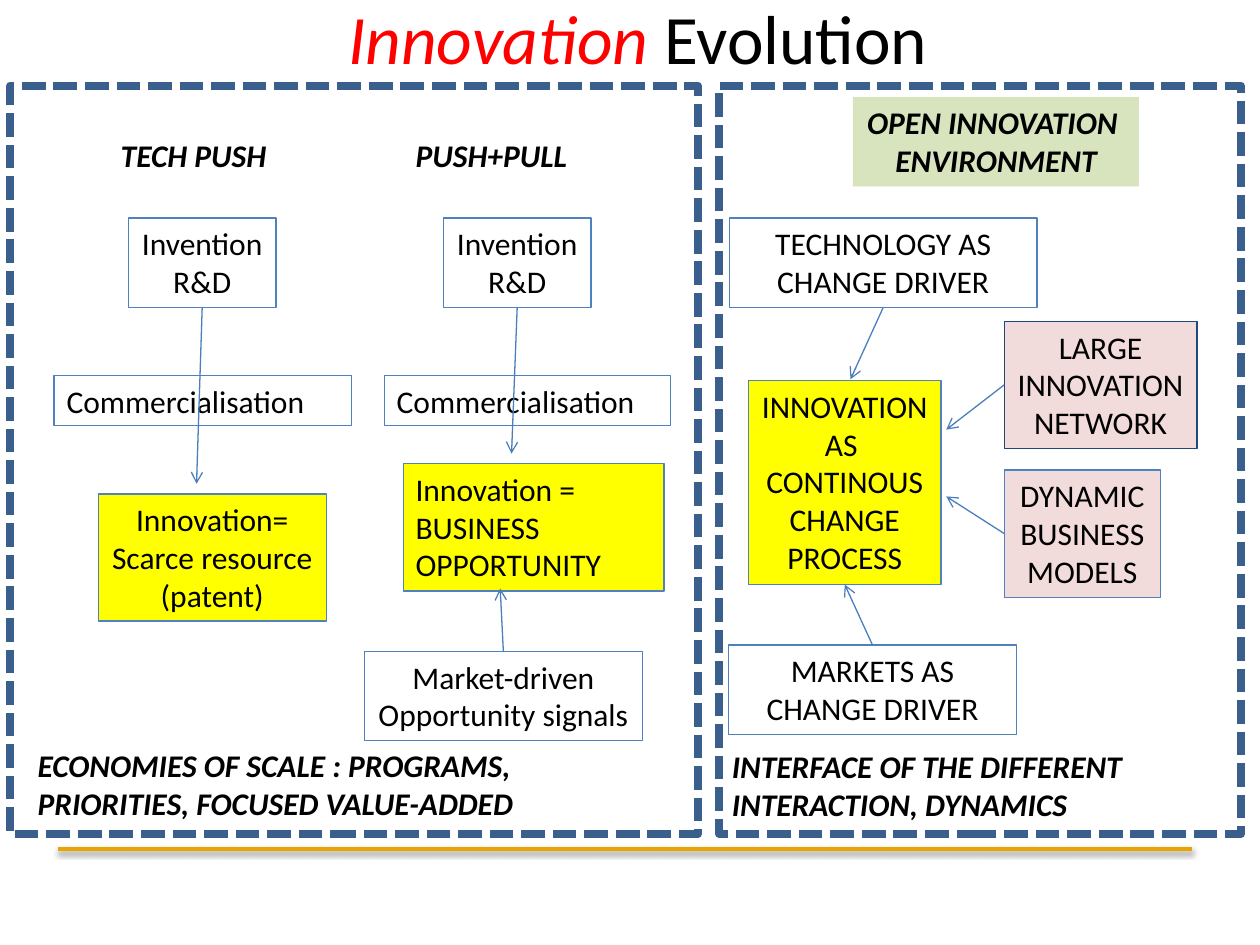
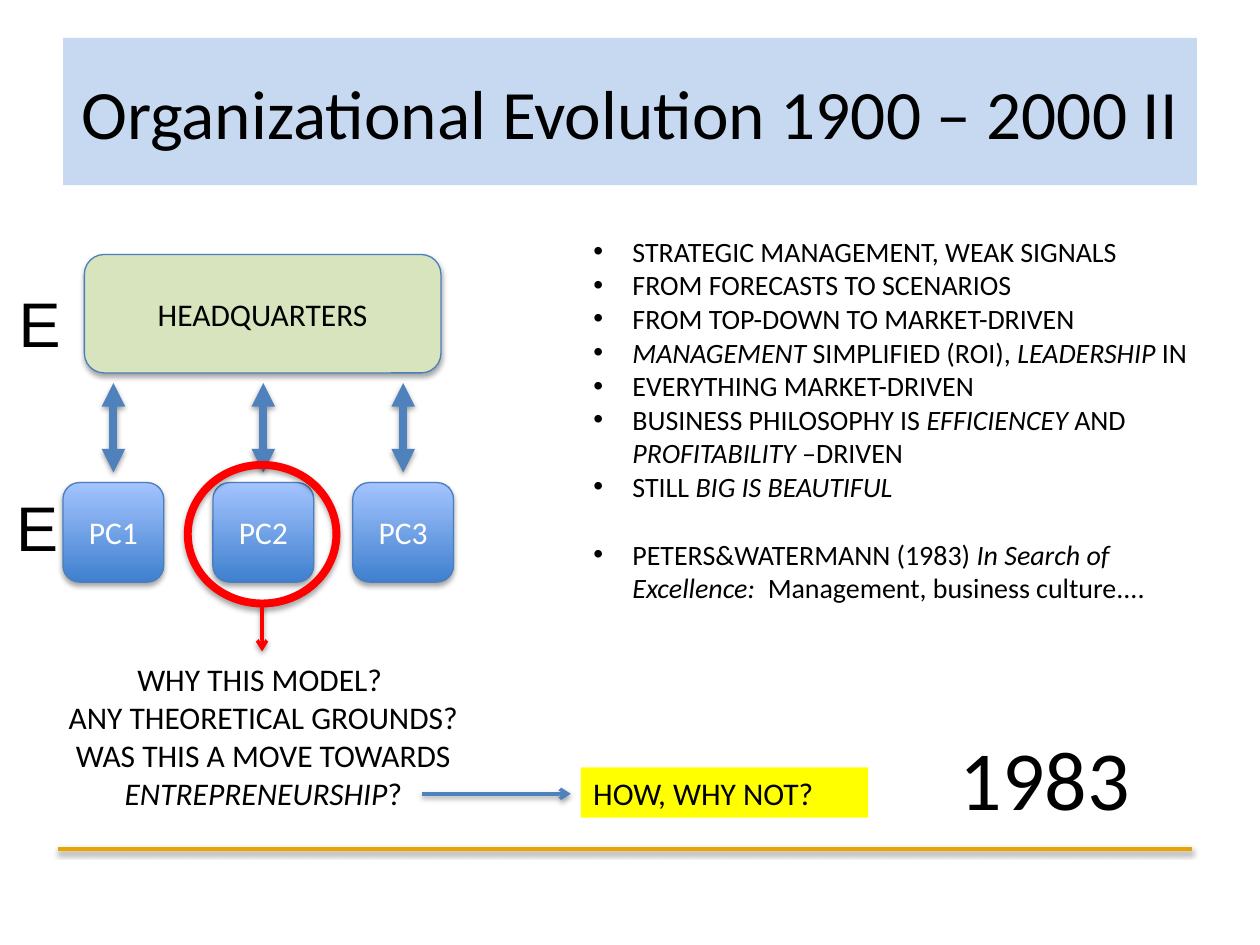
from lxml.etree import SubElement
from pptx import Presentation
from pptx.dml.color import RGBColor
from pptx.enum.dml import MSO_LINE
from pptx.enum.shapes import MSO_CONNECTOR, MSO_SHAPE as SHAPE
from pptx.enum.text import MSO_ANCHOR as ANCHOR, MSO_AUTO_SIZE, PP_ALIGN as ALIGN
from pptx.oxml.ns import qn
from pptx.util import Inches, Pt

# Shared look
BLACK, WHITE, RED, YELLOW = "000000", "FFFFFF", "FF0000", "FFFF00"
BLUE, EDGE, FRAME, NAVY = "4F81BD", "4B7EBC", "3A5F8C", "1F497D"
GREEN, PINK, SKY, GOLD = "D7E4BD", "F2DCDB", "C6D9F1", "E9A400"
PC_GRADIENT = ("3F80CE", "A4C4FF")
TITLE_SIZE = 39.6

# Content of slide 1: *stars* mark emphasis; places are left, top, width, height
INNOVATION_TITLE = " *Innovation *Evolution"
FRAMES = [(0.08, 0.68, 5.46, 5.94), (5.71, 0.68, 4.14, 5.94)]
HEADINGS = [
    ((0.86, 1.03, 1.37, 0.4), ["TECH PUSH"]),
    ((3.2, 1.03, 1.42, 0.4), ["PUSH+PULL"]),
    ((0.2, 5.87, 4.96, 0.71),
     ["ECONOMIES OF SCALE : PROGRAMS,", "PRIORITIES, FOCUSED VALUE-ADDED"]),
    ((5.71, 5.88, 3.33, 0.71),
     ["INTERFACE OF THE DIFFERENT", "INTERACTION, DYNAMICS"]),
]
OPEN_INNOVATION = ((6.77, 0.77, 2.27, 0.71), ["OPEN INNOVATION ", "ENVIRONMENT"])
INVENTION = ["Invention", "R&D"]
# name: place, lines, fill, outline, alignment
STEPS = {
    "push invention": ((1.02, 1.73, 1.17, 0.71), INVENTION, None, BLUE, ALIGN.CENTER),
    "push sale": ((0.43, 2.98, 2.36, 0.4), ["Commercialisation"], None, BLUE, ALIGN.LEFT),
    "push result": ((0.78, 3.92, 1.81, 1.01),
                    ["Innovation=", "Scarce resource", "(patent)"],
                    YELLOW, BLUE, ALIGN.CENTER),
    "pull invention": ((3.52, 1.73, 1.17, 0.71), INVENTION, None, BLUE, ALIGN.CENTER),
    "pull sale": ((3.05, 2.98, 2.27, 0.4), ["Commercialisation"], None, BLUE, ALIGN.LEFT),
    "pull result": ((3.2, 3.68, 2.07, 1.01),
                    ["Innovation =", "BUSINESS", "OPPORTUNITY"],
                    YELLOW, BLUE, ALIGN.LEFT),
    "signals": ((2.89, 5.17, 2.21, 0.71),
                ["Market-driven", "Opportunity signals"], None, BLUE, ALIGN.CENTER),
    "technology": ((5.79, 1.73, 2.44, 0.71),
                   ["TECHNOLOGY AS", "CHANGE DRIVER"], None, BLUE, ALIGN.CENTER),
    "process": ((5.94, 3.02, 1.53, 1.62),
                ["INNOVATION", "AS ", "CONTINOUS", "CHANGE", "PROCESS"],
                YELLOW, BLUE, ALIGN.CENTER),
    "markets": ((5.78, 5.12, 2.29, 0.71),
                ["MARKETS AS", "CHANGE DRIVER"], None, BLUE, ALIGN.CENTER),
    "network": ((7.97, 2.55, 1.53, 1.01),
                ["LARGE", "INNOVATION", "NETWORK"], PINK, NAVY, ALIGN.CENTER),
    "models": ((7.97, 3.73, 1.24, 1.01),
               ["DYNAMIC", "BUSINESS", "MODELS"], PINK, BLUE, ALIGN.CENTER),
}
TOP, LEFT, BOTTOM = 0, 1, 2
# step, side it leaves from, and the point or (step, side) it reaches
FLOWS = [
    ("push invention", BOTTOM, (1.56, 3.84)),
    ("pull invention", BOTTOM, (4.06, 3.6)),
    ("signals", TOP, (3.97, 4.67)),
    ("technology", BOTTOM, (6.75, 3.01)),
    ("markets", TOP, ("process", BOTTOM)),
    ("network", LEFT, (7.51, 3.41)),
    ("models", LEFT, (7.51, 3.94)),
]

# Content of slide 2
ORGANIZATION_TITLE = "Organizational Evolution 1900 – 2000 II"
CENTERS = {"PC1": 0.9, "PC2": 2.09, "PC3": 3.2}
TRENDS = [
    "STRATEGIC MANAGEMENT, WEAK SIGNALS",
    "FROM FORECASTS TO SCENARIOS",
    "FROM TOP-DOWN TO MARKET-DRIVEN",
    "*MANAGEMENT* SIMPLIFIED (ROI), *LEADERSHIP* IN",
    "EVERYTHING MARKET-DRIVEN",
    "BUSINESS PHILOSOPHY IS *EFFICIENCEY* AND *PROFITABILITY* –DRIVEN",
    "STILL *BIG IS BEAUTIFUL*",
    "PETERS&WATERMANN (1983) *In Search of Excellence:  *"
    "Management, business culture....",
]
QUESTIONS = ["WHY THIS MODEL? ", "ANY THEORETICAL GROUNDS?",
             "WAS THIS A MOVE TOWARDS *ENTREPRENEURSHIP*?"]


def rgb(color):
    return RGBColor.from_string(color)


def inches(place):
    return [Inches(length) for length in place]


def write(frame, lines, size=18, color=BLACK, emphasis=None, font="Calibri",
          bold=False, italic=False, align=ALIGN.LEFT, wrap=True,
          anchor=ANCHOR.TOP, hang=None):
    """Fill a text frame; parts between stars are italic, in the emphasis colour."""
    frame.auto_size = MSO_AUTO_SIZE.NONE
    frame.word_wrap = wrap
    frame.vertical_anchor = anchor
    for number, line in enumerate(lines):
        paragraph = frame.paragraphs[0] if number == 0 else frame.add_paragraph()
        paragraph.alignment = align
        paragraph.space_before = Pt(0)
        if hang:
            properties = paragraph._p.get_or_add_pPr()
            properties.set("marL", str(Inches(hang)))
            properties.set("indent", str(-Inches(hang)))
        for part, words in enumerate(line.split("*")):
            if not words:
                continue
            starred = part % 2 == 1
            run = paragraph.add_run()
            run.text = words
            run.font.name, run.font.size = font, Pt(size)
            run.font.bold, run.font.italic = bold, italic or starred
            run.font.color.rgb = rgb(emphasis if starred and emphasis else color)


def add_shadow(shape, alpha=38, distance=20000):
    """Drop a soft shadow straight down; no alpha means no shadow."""
    properties = shape.element.spPr
    effects = properties.find(qn("a:effectLst"))
    if effects is None:
        effects = SubElement(properties, qn("a:effectLst"))
    if alpha:
        outer = SubElement(effects, qn("a:outerShdw"), blurRad="40000",
                           dist=str(distance), dir="5400000", rotWithShape="0")
        black = SubElement(outer, qn("a:srgbClr"), val=BLACK)
        SubElement(black, qn("a:alpha"), val=str(alpha * 1000))


def add_box(slide, place, lines=(), kind=SHAPE.RECTANGLE, fill=None, outline=None,
            width=0.75, shadow=False, **text_format):
    """Add a shape, or a plain text box when it has neither fill nor outline."""
    if not fill and not outline:
        box = slide.shapes.add_textbox(*inches(place))
    else:
        box = slide.shapes.add_shape(kind, *inches(place))
        box.shadow.inherit = False
        if isinstance(fill, tuple):
            box.fill.gradient()
            box.fill.gradient_angle = 90
            for stop, color in zip(box.fill.gradient_stops, fill):
                stop.color.rgb = rgb(color)
        elif fill:
            box.fill.solid()
            box.fill.fore_color.rgb = rgb(fill)
        else:
            box.fill.background()
        if outline:
            box.line.color.rgb, box.line.width = rgb(outline), Pt(width)
        else:
            box.line.fill.background()
        if shadow:
            add_shadow(box, alpha=35, distance=23000)
    write(box.text_frame, lines, **text_format)
    return box


def add_line(slide, start, end, color=EDGE, width=0.75, head=None, tail=None,
             shadow=True):
    line = slide.shapes.add_connector(MSO_CONNECTOR.STRAIGHT, *inches(start + end))
    line.line.color.rgb, line.line.width = rgb(color), Pt(width)
    stroke = line.element.spPr.find(qn("a:ln"))
    for tag, arrow in (("a:headEnd", head), ("a:tailEnd", tail)):
        if arrow:
            SubElement(stroke, qn(tag), type=arrow)
    add_shadow(line, alpha=38 if shadow else None)
    return line


def start_slide(deck, layout, title, place, fill=None):
    """Add a slide with its title and the gold rule at the foot."""
    slide = deck.slides.add_slide(deck.slide_layouts[layout])
    add_line(slide, (0.46, 6.74), (9.46, 6.74), GOLD, 2)
    heading = slide.shapes.title
    heading.left, heading.top, heading.width, heading.height = inches(place)
    if fill:
        heading.fill.solid()
        heading.fill.fore_color.rgb = rgb(fill)
    write(heading.text_frame, [title], size=TITLE_SIZE, emphasis=RED,
          align=ALIGN.CENTER, anchor=ANCHOR.MIDDLE)
    return slide


def build_innovation(deck):
    slide = start_slide(deck, 5, INNOVATION_TITLE, (0.5, 0.05, 9, 0.48))

    # Dashed frames around both eras
    for place in FRAMES:
        frame = add_box(slide, place, outline=FRAME, width=4.5)
        frame.line.dash_style = MSO_LINE.SQUARE_DOT

    # Headings and closing remarks
    for place, lines in HEADINGS:
        add_box(slide, place, lines, bold=True, italic=True, wrap=len(lines) > 1)
    place, lines = OPEN_INNOVATION
    add_box(slide, place, lines, fill=GREEN, bold=True, italic=True,
            align=ALIGN.CENTER, wrap=False)

    # Steps and the flows between them
    steps = {
        name: add_box(slide, place, lines, fill=fill, outline=outline, align=align,
                      wrap=align == ALIGN.LEFT)
        for name, (place, lines, fill, outline, align) in STEPS.items()
    }
    for source, side, target in FLOWS:
        joined = target[0] in steps
        flow = add_line(slide, (0, 0), (0, 0) if joined else target,
                        tail="arrow", shadow=False)
        flow.begin_connect(steps[source], side)
        if joined:
            flow.end_connect(steps[target[0]], target[1])


def build_organization(deck):
    slide = start_slide(deck, 1, ORGANIZATION_TITLE, (0.5, 0.3, 9, 1.17), SKY)

    # Headquarters and profit centers
    card = dict(kind=SHAPE.ROUNDED_RECTANGLE, outline=EDGE, shadow=True,
                align=ALIGN.CENTER, anchor=ANCHOR.MIDDLE)
    add_box(slide, (0.67, 2.02, 2.83, 0.94), ["HEADQUARTERS"], fill=GREEN, **card)
    for name, center in CENTERS.items():
        add_box(slide, (center - 0.4, 3.83, 0.8, 0.79), [name], fill=PC_GRADIENT,
                color=WHITE, **card)
        add_line(slide, (center, 3.04), (center, 3.75), BLUE, 4.5,
                 head="triangle", tail="triangle")
    for place in ((0.05, 2.21, 0.47, 0.71), (0.03, 3.83, 0.47, 0.71)):
        add_box(slide, place, ["E"], size=36, font="Arial", wrap=False)

    # Trends, with one line of air before the reference
    trends = slide.placeholders[1]
    trends.left, trends.top, trends.width, trends.height = inches((4.61, 1.81, 4.96, 3.87))
    write(trends.text_frame, TRENDS, size=16, hang=0.31)
    trends.text_frame.paragraphs[-1].space_before = Pt(19.5)

    # Circled center and the questions it raises
    add_box(slide, (1.49, 3.69, 1.18, 1.1), kind=SHAPE.OVAL, outline=RED, width=4.5,
            shadow=True)
    add_line(slide, (2.08, 4.79), (2.08, 5.17), RED, 2, tail="arrow")
    add_box(slide, (0.2, 5.19, 3.78, 1.31), QUESTIONS, align=ALIGN.CENTER)
    add_line(slide, (3.35, 6.3), (4.53, 6.3), BLUE, 2, tail="arrow")
    add_box(slide, (4.61, 6.09, 2.28, 0.4), ["HOW, WHY NOT?"], fill=YELLOW)
    add_box(slide, (7.52, 5.72, 1.57, 0.91), ["1983"], size=48, wrap=False)


def main():
    deck = Presentation()
    deck.slide_width, deck.slide_height = Inches(10), Inches(7.5)
    build_innovation(deck)
    build_organization(deck)
    deck.save("out.pptx")


if __name__ == "__main__":
    main()
